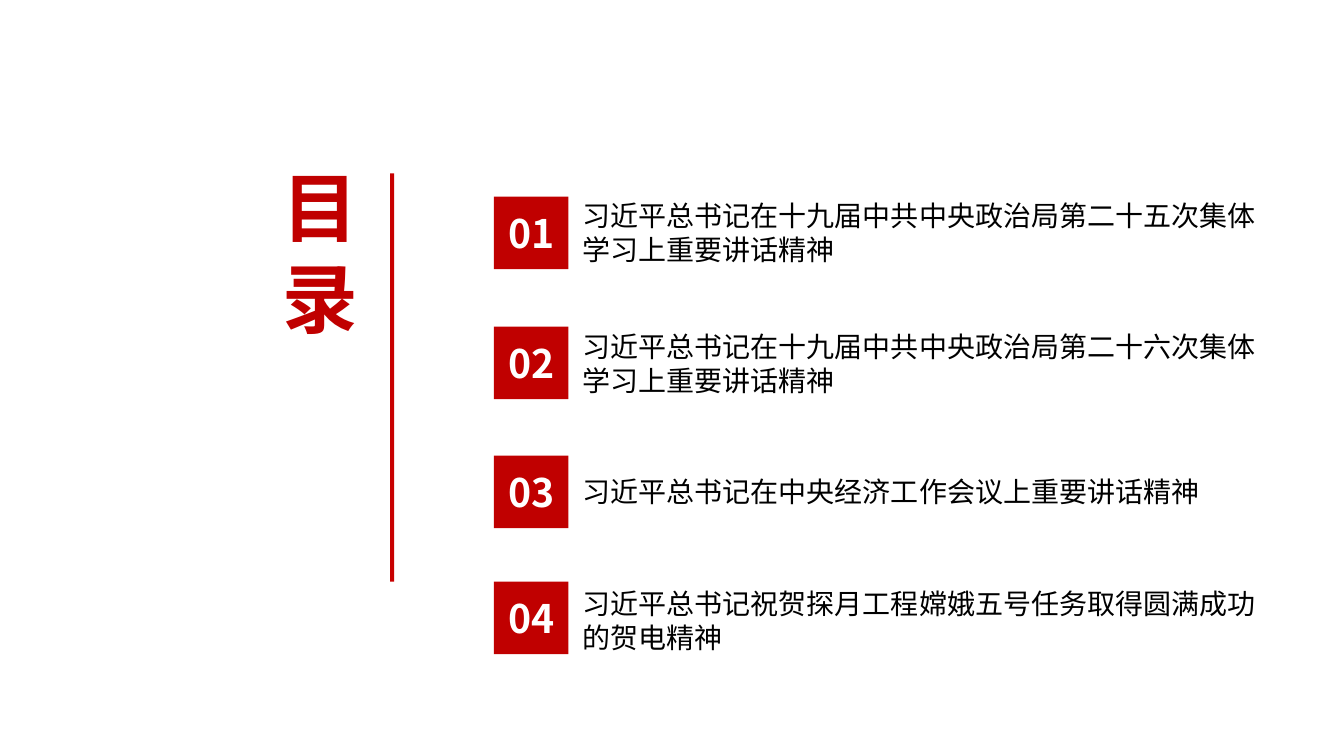
"""Build a contents slide with a vertical heading and four numbered entries."""
import lxml.etree
import pptx
import pptx.dml.color
import pptx.enum.shapes
import pptx.enum.text
import pptx.oxml.ns
import pptx.util

WIDTH, HEIGHT = pptx.util.Inches(13.333), pptx.util.Inches(7.5)
FONT = "Noto Sans CJK SC"
COLORS = {"red": "C00000", "rule": "C80000", "black": "000000", "white": "FFFFFF"}
HEADING = {"size": pptx.util.Pt(54), "bold": True}
NUMBER = {"size": pptx.util.Pt(28), "bold": True}
LABEL = {"size": pptx.util.Pt(20), "bold": False}
HEADING_FRAME = {
    "margin_left": pptx.util.Inches(0.07),
    "margin_right": pptx.util.Inches(0.07),
    "margin_top": pptx.util.Inches(0.04),
    "margin_bottom": pptx.util.Inches(0.04),
}
ENTRIES = [
    (26, (25.6, 52.8, 10.27), "习近平总书记在十九届中共中央政治局第二十五次集体学习上重要讲话精神"),
    (43.2, (42.93, 52.8, 10.27), "习近平总书记在十九届中共中央政治局第二十六次集体学习上重要讲话精神"),
    (60.27, (62.13, 51.98, 5.87), "习近平总书记在中央经济工作会议上重要讲话精神"),
    (76.93, (76.93, 51.98, 10.27), "习近平总书记祝贺探月工程嫦娥五号任务取得圆满成功的贺电精神"),
]


def place(left, top, width, height):
    """Turn percentages of the slide into lengths."""
    shares = zip((left, top, width, height), (WIDTH, HEIGHT, WIDTH, HEIGHT))
    return [pptx.util.Emu(round(share * full / 100)) for share, full in shares]


def apply(target, values):
    """Set each named attribute on the target."""
    for name, value in values.items():
        setattr(target, name, value)


def write(box, text, style, color):
    """Write one styled paragraph into a box and return the paragraph."""
    box.text_frame.word_wrap = True
    para = box.text_frame.paragraphs[0]
    span = para.add_run()
    span.text = text
    apply(span.font, {"name": FONT, **style})
    span.font.color.rgb = pptx.dml.color.RGBColor.from_string(COLORS[color])
    east_asian = lxml.etree.SubElement(span.font._element, pptx.oxml.ns.qn("a:ea"))
    east_asian.set("typeface", FONT)
    return para


def add_text(shapes, area, text, style, color):
    """Add a wrapping text box that grows with its text."""
    box = shapes.add_textbox(*place(*area))
    write(box, text, style, color)
    box.text_frame.auto_size = pptx.enum.text.MSO_AUTO_SIZE.SHAPE_TO_FIT_TEXT
    return box


def add_block(shapes, area, color):
    """Add a plain filled rectangle."""
    block = shapes.add_shape(pptx.enum.shapes.MSO_SHAPE.RECTANGLE, *place(*area))
    block.shadow.inherit = False
    block.fill.solid()
    block.fill.fore_color.rgb = pptx.dml.color.RGBColor.from_string(COLORS[color])
    block.line.fill.background()
    return block


def add_entry(page, number, badge_top, label_area, text):
    """Add a numbered badge and its label as one group."""
    entry = page.shapes.add_group_shape()
    label_top, label_width, label_height = label_area
    area = (42.6, label_top, label_width, label_height)
    add_text(entry.shapes, area, text, LABEL, "black")
    badge = add_block(entry.shapes, (36.75, badge_top, 5.55, 9.6), "red")
    badge.text_frame.vertical_anchor = pptx.enum.text.MSO_ANCHOR.MIDDLE
    para = write(badge, f"{number:02d}", NUMBER, "white")
    para.alignment = pptx.enum.text.PP_ALIGN.CENTER


def main():
    """Build and save the deck."""
    deck = pptx.Presentation()
    apply(deck, {"slide_width": WIDTH, "slide_height": HEIGHT})
    page = deck.slides.add_slide(deck.slide_layouts[6])
    heading = add_text(page.shapes, (20.48, 20.8, 9, 25.2), "目录", HEADING, "red")
    apply(heading.text_frame, HEADING_FRAME)
    add_block(page.shapes, (29.03, 22.93, 0.3, 54), "rule")
    for number, entry in enumerate(ENTRIES, start=1):
        add_entry(page, number, *entry)
    deck.save("out.pptx")


if __name__ == "__main__":
    main()
